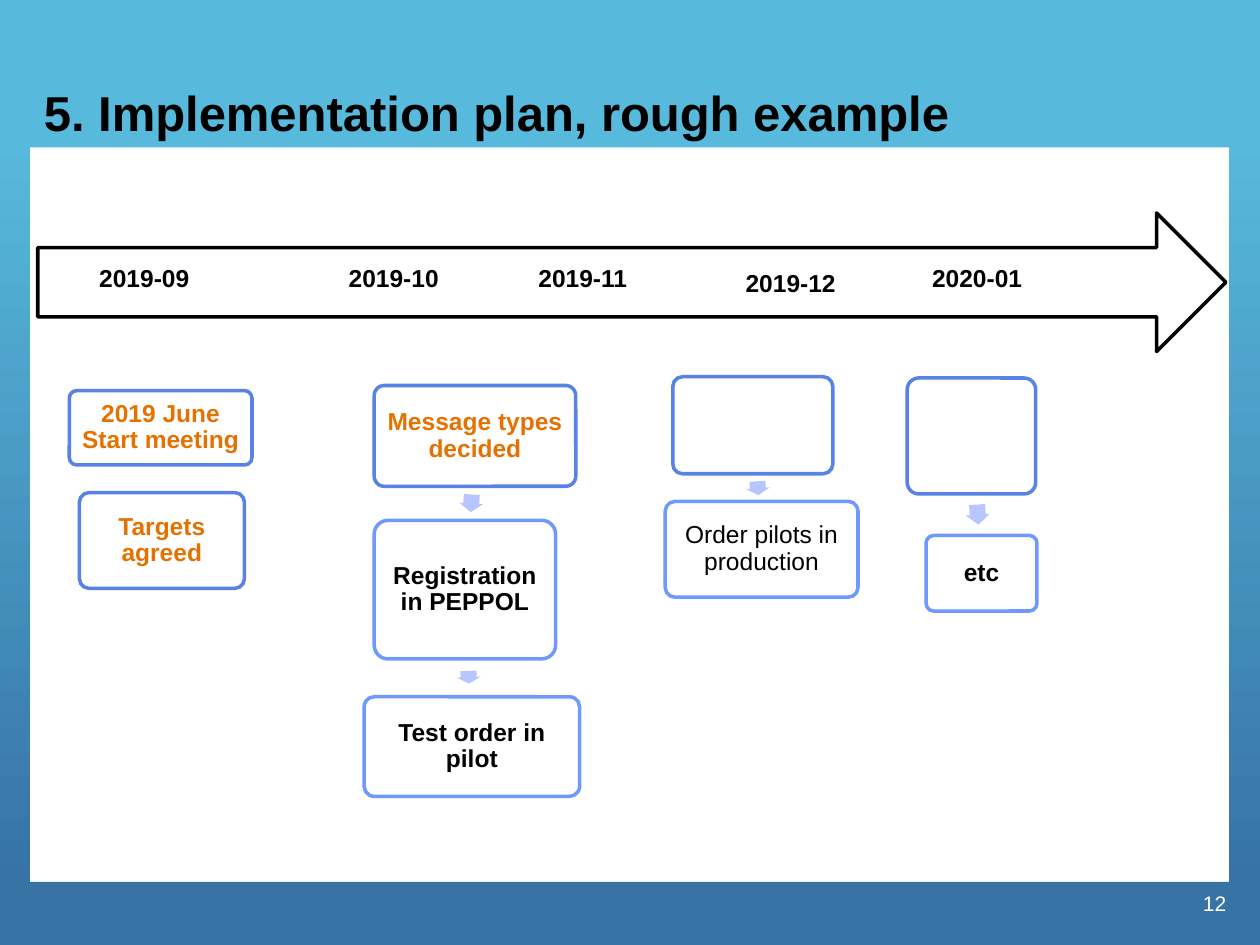
from lxml.etree import SubElement
from pptx import Presentation
from pptx.dml.color import RGBColor
from pptx.enum.shapes import MSO_SHAPE
from pptx.enum.text import MSO_ANCHOR, PP_ALIGN
from pptx.oxml.ns import qn
from pptx.util import Inches, Pt

COLORS = {
    "sky": "57B9DC",
    "ocean": "3773A5",
    "white": "FFFFFF",
    "black": "000000",
    "orange": "E57200",
    "milestone": "5882E6",
    "step": "618FFD",
    "step_arrow": "B7C6FE",
}


def rgb(name):
    return RGBColor.from_string(COLORS[name])


def add_box(slide, kind, position, fill, line=None):
    """Add a preset shape with a plain fill and an optional 2 pt outline."""
    shape = slide.shapes.add_shape(kind, *map(Inches, position))
    shape.shadow.inherit = False
    shape.fill.solid()
    shape.fill.fore_color.rgb = rgb(fill)
    if line:
        shape.line.color.rgb = rgb(line)
        shape.line.width = Pt(2)
    else:
        shape.line.fill.background()
    return shape


def set_text(shape, text, size=14, color="black", bold=True,
             align=PP_ALIGN.CENTER, anchor=MSO_ANCHOR.MIDDLE,
             margins=(0.1, 0.05), spacing=0.9):
    frame = shape.text_frame
    frame.text = text
    frame.word_wrap = True
    frame.vertical_anchor = anchor
    frame.margin_left = frame.margin_right = Inches(margins[0])
    frame.margin_top = frame.margin_bottom = Inches(margins[1])
    paragraph = frame.paragraphs[0]
    paragraph.alignment = align
    paragraph.line_spacing = spacing
    font = paragraph.runs[0].font
    font.name = "Arial"
    font.size = Pt(size)
    font.bold = bold
    font.color.rgb = rgb(color)


def add_label(slide, position, text, **style):
    label = slide.shapes.add_textbox(*map(Inches, position))
    set_text(label, text, **style)


def add_side_bar(slide, left):
    bar = add_box(slide, MSO_SHAPE.RECTANGLE, (left, 1.08, 0.25, 5.92), "sky")
    bar.fill.gradient()
    bar.fill.gradient_angle = 270
    for stop, color in zip(bar.fill.gradient_stops, ("sky", "ocean")):
        stop.color.rgb = rgb(color)


def add_card(slide, position, line, text="", color="black", bold=True):
    card = add_box(slide, MSO_SHAPE.ROUNDED_RECTANGLE, position, "white", line)
    card.adjustments[0] = 0.1
    if line == "step":
        # Steps are slightly transparent
        for color_element in card._element.spPr.iter(qn("a:srgbClr")):
            SubElement(color_element, qn("a:alpha"), val="90000")
    if text:
        set_text(card, text, color=color, bold=bold, margins=(0.02, 0.02))


def add_step_arrow(slide, left, top, length, rotation):
    arrow = add_box(slide, MSO_SHAPE.RIGHT_ARROW, (left, top, length, 0.19),
                    "step_arrow")
    arrow.adjustments[0] = 0.667
    arrow.rotation = rotation


def main():
    presentation = Presentation()
    presentation.slide_width = Inches(10)
    presentation.slide_height = Inches(7.5)
    slide = presentation.slides.add_slide(presentation.slide_layouts[6])

    # Frame around the white content area
    add_side_bar(slide, -0.01)
    add_box(slide, MSO_SHAPE.RECTANGLE, (0, 7, 10, 0.5), "ocean")
    add_box(slide, MSO_SHAPE.RECTANGLE, (0, 0, 10, 1.17), "sky")
    add_side_bar(slide, 9.75)

    # Slide number and title
    add_label(slide, (7.75, 6.92, 2.08, 0.5), "12", size=12, color="white",
              bold=False, align=PP_ALIGN.RIGHT, spacing=1.0)
    add_label(slide, (0.25, 0.17, 9.5, 1), "5. Implementation plan, rough example",
              size=28, align=PP_ALIGN.LEFT, anchor=MSO_ANCHOR.BOTTOM, spacing=1.0)

    # Milestones
    milestones = [
        ((0.55, 3.1, 1.45, 0.59), "2019 June Start meeting"),
        ((0.63, 3.91, 1.31, 0.76), "Targets agreed"),
        ((2.97, 3.06, 1.6, 0.8), "Message types decided"),
        ((5.34, 2.99, 1.27, 0.77), ""),
        ((7.2, 3, 1.02, 0.92), ""),
    ]
    for position, text in milestones:
        add_card(slide, position, "milestone", text, color="orange")

    # Steps that follow the milestones
    steps = [
        ((2.97, 4.13, 1.44, 1.1), "Registration in PEPPOL", True),
        ((2.89, 5.53, 1.71, 0.79), "Test order in pilot", True),
        ((5.28, 3.98, 1.53, 0.76), "Order pilots in production", False),
        ((7.35, 4.25, 0.88, 0.6), "etc", True),
    ]
    for position, text, bold in steps:
        add_card(slide, position, "step", text, bold=bold)

    # Arrows between the cards: left, top, length, rotation
    step_arrows = [
        (3.67, 3.9, 0.14, 93.6),
        (3.67, 5.28, 0.1, 87.4),
        (5.96, 3.78, 0.11, 86.1),
        (7.68, 3.99, 0.16, 85.8),
    ]
    for step_arrow in step_arrows:
        add_step_arrow(slide, *step_arrow)

    # Timeline
    add_box(slide, MSO_SHAPE.RIGHT_ARROW, (0.3, 1.69, 9.43, 1.1), "white", "black")
    months = [
        ("2019-09", 0.42, 1.94),
        ("2019-10", 2.4, 1.94),
        ("2019-11", 3.9, 1.94),
        ("2019-12", 5.55, 1.98),
        ("2020-01", 7.03, 1.94),
    ]
    for month, left, top in months:
        add_label(slide, (left, top, 1.45, 0.55), month, margins=(0, 0.16))

    presentation.save("out.pptx")


if __name__ == "__main__":
    main()
